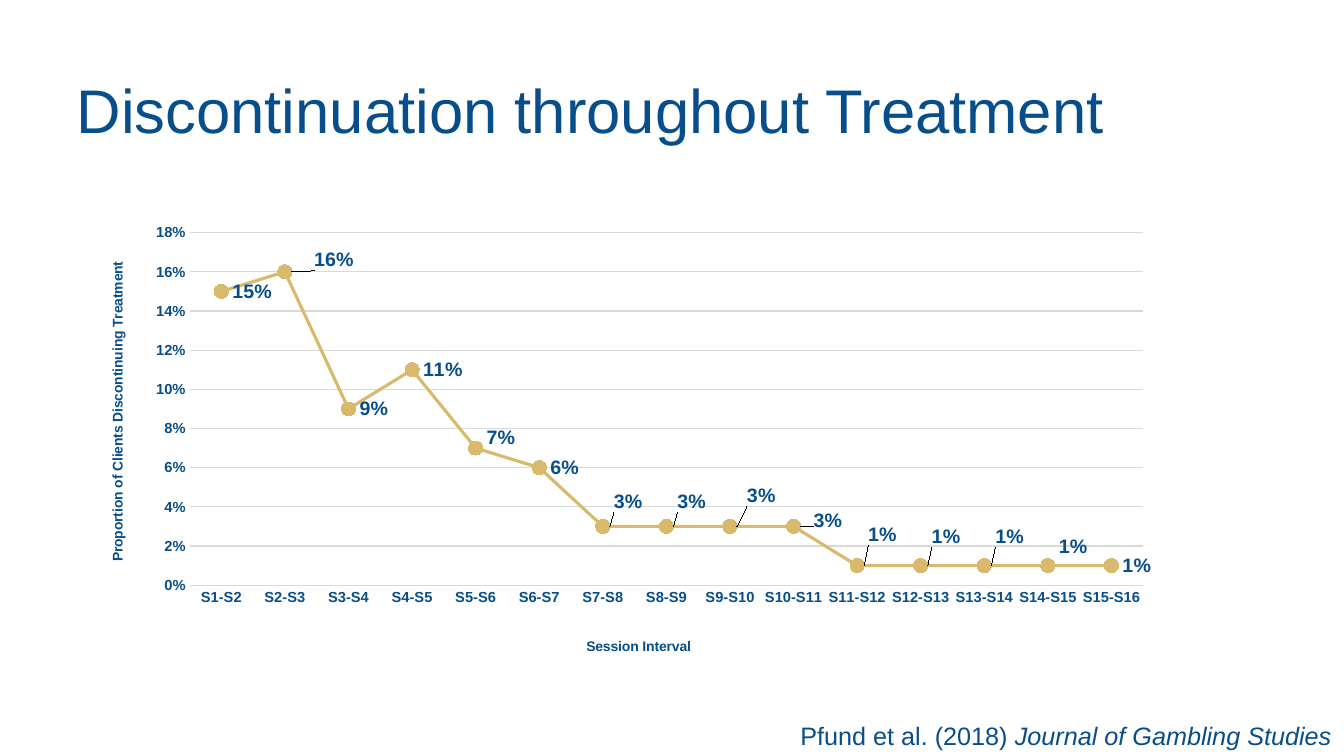
from dataclasses import dataclass

from lxml import etree
from pptx import Presentation
from pptx import util as u
from pptx.chart.data import CategoryChartData
from pptx.dml.color import RGBColor
from pptx.enum import chart as ch, text
from pptx.oxml.ns import qn


@dataclass(frozen=True)
class Theme:
    navy: RGBColor = RGBColor(0x08, 0x4E, 0x8A)
    gold: RGBColor = RGBColor(0xD9, 0xBA, 0x6D)
    grid: RGBColor = RGBColor(0xD9, 0xD9, 0xD9)
    font: str = "Arial"
    chart_font: str = "Calibri"
    title: float = 44
    source: float = 18
    label: float = 14
    tick: float = 10.5
    axis_title: float = 10


T = Theme()
CHART_W, CHART_H = 10.66, 4.4
RATES = [0.15, 0.16, 0.09, 0.11, 0.07, 0.06] + [0.03] * 4 + [0.01] * 5
# Label shifts from the default place, in inches, by point index
LABEL_SHIFTS = {
    1: (0.18, -0.12), 4: (0, -0.1), 6: (0, -0.25), 7: (0, -0.25),
    8: (0.06, -0.31), 9: (0.09, -0.06), 10: (0, -0.31),
    11: (0, -0.29), 12: (0, -0.29), 13: (0, -0.19),
}


def set_font(font, size, **extra):
    values = {"name": T.font, "size": u.Pt(size), **extra}
    for name, value in values.items():
        setattr(font, name, value)
    font.color.rgb = T.navy


def set_line(line, color, width):
    line.color.rgb = color
    line.width = u.Pt(width)


def set_layout(parent, index, x, y, w=None, h=None, edge=True):
    """Place a chart part by inches measured within the chart frame."""
    for old in parent.findall(qn("c:layout")):
        parent.remove(old)
    layout = etree.Element(qn("c:layout"))
    manual = etree.SubElement(layout, qn("c:manualLayout"))
    values = {}
    if w:
        values["layoutTarget"] = "inner"
    if edge:
        values.update(xMode="edge", yMode="edge")
    values.update(x=x / CHART_W, y=y / CHART_H)
    if w:
        values.update(w=w / CHART_W, h=h / CHART_H)
    for name, value in values.items():
        etree.SubElement(manual, qn(f"c:{name}")).set("val", str(value))
    parent.insert(index, layout)


def add_title(slide, wording):
    sp = slide.shapes.title
    sp.left, sp.top = u.Inches(0.66), u.Inches(0.4)
    sp.width, sp.height = u.Inches(11.32), u.Inches(1.45)
    tf = sp.text_frame
    tf.vertical_anchor = text.MSO_ANCHOR.MIDDLE
    p = tf.paragraphs[0]
    p.alignment, p.line_spacing = text.PP_ALIGN.LEFT, 0.9
    r = p.add_run()
    r.text = wording
    set_font(r.font, T.title)


def add_source(slide, authors, journal):
    sp = slide.shapes.add_textbox(u.Inches(7.84), u.Inches(7.1),
                                  u.Inches(6.39), u.Inches(0.4))
    tf = sp.text_frame
    tf.word_wrap = True
    tf.auto_size = text.MSO_AUTO_SIZE.SHAPE_TO_FIT_TEXT
    p = tf.paragraphs[0]
    for wording, italic in ((authors, False), (journal, True)):
        r = p.add_run()
        r.text = wording
        set_font(r.font, T.source, italic=italic)


def format_axis(axis, wording, x, y, rotation):
    axis.major_tick_mark = axis.minor_tick_mark = ch.XL_TICK_MARK.NONE
    set_font(axis.tick_labels.font, T.tick, bold=True)
    title = axis.axis_title
    p = title.text_frame.paragraphs[0]
    r = p.add_run()
    r.text = wording
    set_font(r.font, T.axis_title, bold=True)
    title.element.find(".//" + qn("a:bodyPr")).set("rot", str(rotation))
    set_layout(title.element, 1, x, y)


def format_series(series):
    series.smooth = False
    set_line(series.format.line, T.gold, 2.25)
    marker = series.marker
    marker.style, marker.size = ch.XL_MARKER_STYLE.CIRCLE, 10
    marker.format.fill.solid()
    marker.format.fill.fore_color.rgb = T.gold
    set_line(marker.format.line, T.gold, 0.75)


def format_labels(chart, series):
    labels = series.data_labels
    values = {"show_value": True, "number_format": "0%",
              "number_format_is_linked": False,
              "position": ch.XL_LABEL_POSITION.RIGHT}
    for name, value in values.items():
        setattr(labels, name, value)
    set_font(labels.font, T.label, bold=True)
    # Shifted labels
    for i in LABEL_SHIFTS:
        label = series.points[i].data_label
        set_font(label.font, T.label, bold=True)
        label.position = ch.XL_LABEL_POSITION.RIGHT
    for node in chart.element.iter(qn("c:dLbl")):
        i = int(node.find(qn("c:idx")).get("val"))
        set_layout(node, 1, *LABEL_SHIFTS[i], edge=False)
        fmt = etree.Element(qn("c:numFmt"), formatCode="0%", sourceLinked="0")
        node.insert(2, fmt)


def add_rate_chart(slide):
    data = CategoryChartData(number_format="0%")
    data.categories = [f"S{i}-S{i + 1}" for i in range(1, len(RATES) + 1)]
    data.add_series("Series 1", RATES)
    chart = slide.shapes.add_chart(
        ch.XL_CHART_TYPE.LINE_MARKERS, u.Inches(0.9), u.Inches(2.14),
        u.Inches(CHART_W), u.Inches(CHART_H), data).chart
    chart.has_legend = chart.has_title = False
    chart.font.name, chart.font.size = T.chart_font, u.Pt(T.axis_title)
    chart.plots[0].vary_by_categories = False
    set_layout(chart.element.find(".//" + qn("c:plotArea")), 0,
               0.98, 0.17, 9.46, 3.53)

    # Axes
    cat, val = chart.category_axis, chart.value_axis
    format_axis(cat, "Session Interval", 4.89, 4.2, 0)
    format_axis(val, "Proportion of Clients Discontinuing Treatment",
                0.15, 0.46, -5400000)
    set_line(cat.format.line, T.grid, 0.75)
    val.format.line.fill.background()
    val.minimum_scale, val.maximum_scale, val.major_unit = 0, 0.18, 0.02
    val.tick_labels.number_format = "0%"
    val.tick_labels.number_format_is_linked = False
    set_line(val.major_gridlines.format.line, T.grid, 0.75)

    # Line and labels
    series = chart.plots[0].series[0]
    format_series(series)
    format_labels(chart, series)


def main():
    prs = Presentation()
    prs.slide_width, prs.slide_height = u.Inches(13.33), u.Inches(7.5)
    slide = prs.slides.add_slide(prs.slide_layouts[5])
    add_title(slide, "Discontinuation throughout Treatment")
    add_source(slide, "Pfund et al. (2018) ", "Journal of Gambling Studies")
    add_rate_chart(slide)
    prs.save("out.pptx")


if __name__ == "__main__":
    main()
